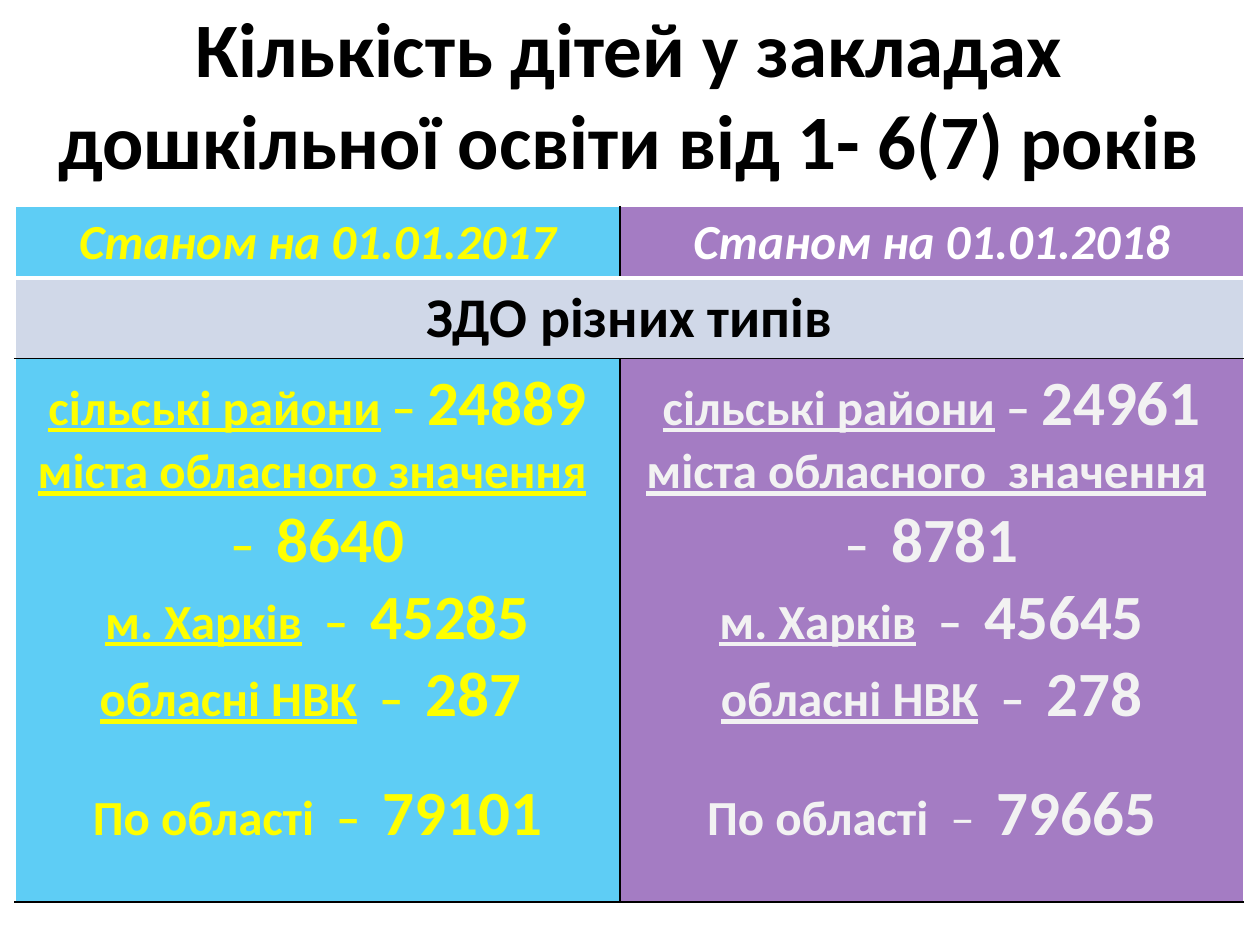
from pptx import Presentation
from pptx.dml.color import RGBColor
from pptx.enum.text import MSO_ANCHOR, PP_ALIGN
from pptx.oxml import parse_xml
from pptx.oxml.ns import nsdecls
from pptx.util import Inches, Pt

CENTER = PP_ALIGN.CENTER
MIDDLE = MSO_ANCHOR.MIDDLE
FONT = "Calibri"
BLACK, WHITE, YELLOW, PALE = "000000", "FFFFFF", "FFFF00", "F2F2F2"
BLUE, PURPLE, GRAY = "00B0F0", "7030A0", "D0D8E8"
TINT = 63

COLUMN_WIDTHS = [4.8, 4.95]
ROW_HEIGHTS = [0.56, 0.64, 4.31]
HEADINGS = ["Станом на 01.01.2017", "Станом на 01.01.2018"]
COLUMN_FILLS = [BLUE, PURPLE]
HEADING_COLORS = [YELLOW, WHITE]
COUNT_COLORS = [YELLOW, PALE]
# Each entry: label, dash, number
COUNTS = [
    [
        ("сільські райони", " – ", "24889"),
        ("міста обласного значення", "  –  ", "8640"),
        ("м. Харків", "  –  ", "45285"),
        ("обласні НВК", "  –  ", "287 "),
        ("По області", "  –  ", "79101"),
    ],
    [
        ("сільські райони", " – ", "24961"),
        ("міста обласного  значення", "  –  ", "8781"),
        ("м. Харків", "  –  ", "45645"),
        ("обласні НВК", "  –  ", "278"),
        ("По області", "  –  ", "79665"),
    ],
]


def rgb(color):
    return RGBColor.from_string(color)


def style_run(span, size, color, bold=True, italic=False, underline=False):
    font = span.font
    font.name = FONT
    font.size = Pt(size)
    font.bold = bold
    font.italic = italic
    font.underline = underline
    font.color.rgb = rgb(color)


def write_line(frame, text, size, color, italic=False):
    """Fill a text frame with one centred bold line."""
    frame.text = text
    para = frame.paragraphs[0]
    para.alignment = CENTER
    style_run(para.runs[0], size, color, italic=italic)


def add_title(page, text):
    box = page.shapes.add_textbox(Inches(0.12), Inches(0.13), Inches(9.75), Inches(1.21))
    frame = box.text_frame
    frame.word_wrap = True
    frame.vertical_anchor = MIDDLE
    write_line(frame, text, 44, BLACK)


def set_borders(cell, left, right, top, bottom):
    """Draw the four cell borders, each given as (colour, points)."""
    properties = cell._tc.get_or_add_tcPr()
    for side, (color, width) in zip("LRTB", (left, right, top, bottom)):
        properties.append(parse_xml(
            f'<a:ln{side} {nsdecls("a")} w="{Pt(width)}"><a:solidFill>'
            f'<a:srgbClr val="{color}"/></a:solidFill></a:ln{side}>'
        ))


def fill_cell(cell, color, opacity=100):
    cell.fill.solid()
    cell.fill.fore_color.rgb = rgb(color)
    if opacity < 100:
        color_element = cell._tc.tcPr.find(
            "./{*}solidFill/{*}srgbClr"
        )
        color_element.append(
            parse_xml(f'<a:alpha {nsdecls("a")} val="{opacity * 1000}"/>')
        )


def write_counts(cell, counts, color):
    frame = cell.text_frame
    for index, (label, dash, number) in enumerate(counts):
        is_total = index == len(counts) - 1
        para = frame.paragraphs[0] if index == 0 else frame.add_paragraph()
        para.alignment = CENTER
        if is_total:
            para.space_before = Pt(24)
        dash_bold = not (is_total and color == PALE)
        for text, size, bold, underline in (
            (label, 28, True, not is_total),
            (dash, 28, dash_bold, False),
            (number, 36, True, False),
        ):
            span = para.add_run()
            span.text = text
            style_run(span, size, color, bold=bold, underline=underline)


def add_counts_table(page):
    frame = page.shapes.add_table(
        3, 2, Inches(0.12), Inches(1.64),
        Inches(sum(COLUMN_WIDTHS)), Inches(sum(ROW_HEIGHTS)),
    )
    table = frame.table
    table.first_row = table.horz_banding = False
    for column, width in zip(table.columns, COLUMN_WIDTHS):
        column.width = Inches(width)
    for row, height in zip(table.rows, ROW_HEIGHTS):
        row.height = Inches(height)

    thin_white, thick_white, thin_black = (WHITE, 1), (WHITE, 3), (BLACK, 1)
    table.cell(1, 0).merge(table.cell(1, 1))
    for index in range(2):
        left = thin_black if index else thin_white
        right = thin_white if index else thin_black

        heading = table.cell(0, index)
        heading.vertical_anchor = MIDDLE
        write_line(heading.text_frame, HEADINGS[index], 28, HEADING_COLORS[index], italic=True)
        set_borders(heading, left, right, thin_white, thick_white)
        fill_cell(heading, COLUMN_FILLS[index], TINT)

        band = table.cell(1, index)
        set_borders(band, thin_white, thin_white, thick_white, thin_black)
        fill_cell(band, GRAY)

        body = table.cell(2, index)
        write_counts(body, COUNTS[index], COUNT_COLORS[index])
        set_borders(body, left, right, thin_black, thin_black)
        fill_cell(body, COLUMN_FILLS[index], TINT)

    subtitle = table.cell(1, 0)
    subtitle.vertical_anchor = MIDDLE
    write_line(subtitle.text_frame, "ЗДО різних типів", 32, BLACK)


def main():
    deck = Presentation()
    deck.slide_width = Inches(10)
    deck.slide_height = Inches(7.5)
    page = deck.slides.add_slide(deck.slide_layouts[6])
    add_title(page, "Кількість дітей у закладах дошкільної освіти від 1- 6(7) років")
    add_counts_table(page)
    deck.save("out.pptx")


if __name__ == "__main__":
    main()
